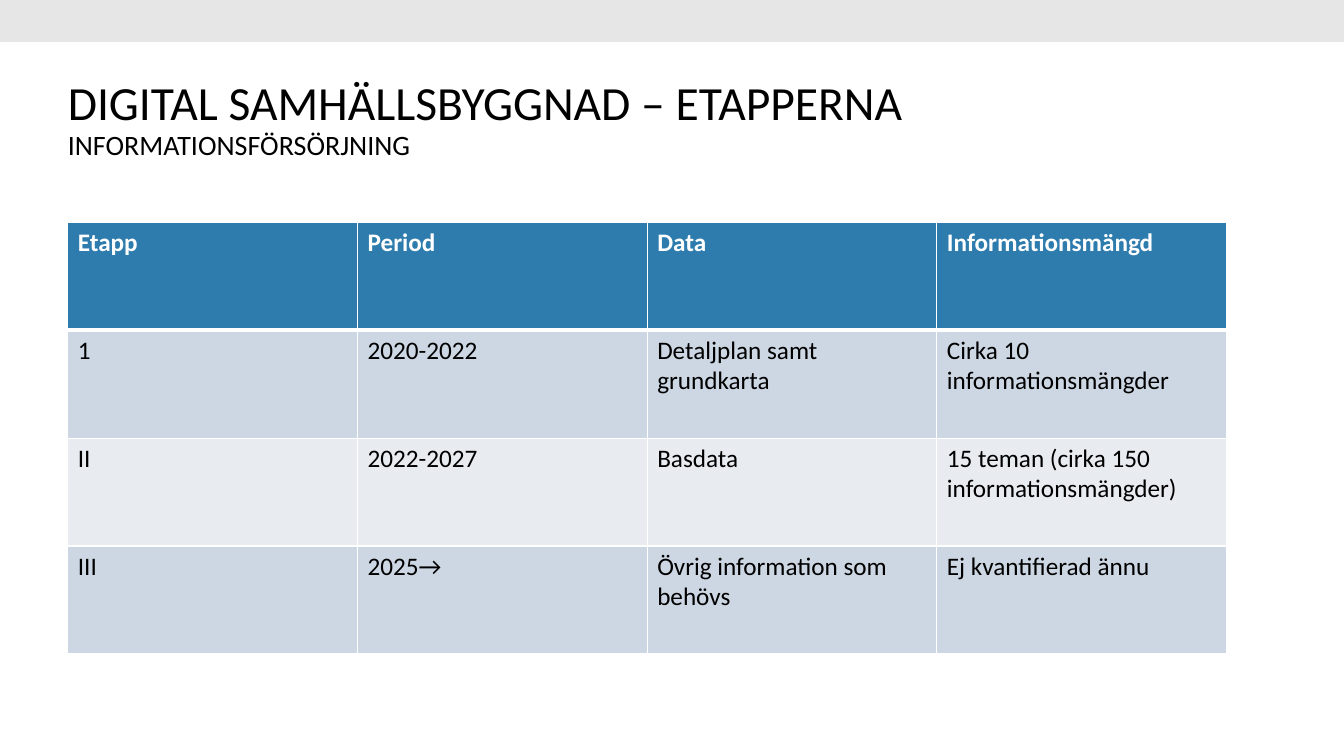
"""Build the slide on the stages of digital community planning."""
from dataclasses import dataclass

from lxml import etree
from pptx import Presentation
from pptx.dml.color import RGBColor
from pptx.enum.shapes import MSO_SHAPE
from pptx.enum.text import MSO_ANCHOR
from pptx.oxml.ns import qn
from pptx.util import Cm, Pt

RECTANGLE = MSO_SHAPE.RECTANGLE
TOP = MSO_ANCHOR.TOP

BLACK = RGBColor(0x00, 0x00, 0x00)
WHITE = RGBColor(0xFF, 0xFF, 0xFF)
BAND_GREY = RGBColor(0xE7, 0xE6, 0xE6)
HEADER_BLUE = RGBColor(0x2D, 0x7C, 0xAD)
ROW_DARK = RGBColor(0xCD, 0xD7, 0xE3)
ROW_LIGHT = RGBColor(0xE8, 0xEC, 0xF1)

FONT = "Calibri"
PAGE_WIDTH, PAGE_HEIGHT = Cm(33.87), Cm(19.05)
LEFT, CONTENT_WIDTH = Cm(1.71), Cm(29.2)
COLUMN_WIDTH, ROW_HEIGHT = Cm(7.3), Cm(2.72)


@dataclass(frozen=True)
class StageRow:
    texts: tuple[str, ...]
    fill: RGBColor
    color: RGBColor = BLACK
    bold: bool = False
    bottom_line: float = 1


ROWS = (
    StageRow(("Etapp", "Period", "Data", "Informationsmängd"), HEADER_BLUE, WHITE, True, 3),
    StageRow(("1", "2020-2022", "Detaljplan samt grundkarta", "Cirka 10 informationsmängder"), ROW_DARK),
    StageRow(("II", "2022-2027", "Basdata", "15 teman (cirka 150 informationsmängder)"), ROW_LIGHT),
    StageRow(("III", "2025→", "Övrig information som behövs", "Ej kvantifierad ännu"), ROW_DARK),
)


def add_span(para, text: str, size: float, color: RGBColor, bold: bool = False) -> None:
    span = para.add_run()
    span.text = text
    for name, value in {"name": FONT, "size": Pt(size), "bold": bold}.items():
        setattr(span.font, name, value)
    span.font.color.rgb = color


def add_band(page) -> None:
    band = page.shapes.add_shape(RECTANGLE, 0, 0, PAGE_WIDTH, Cm(1.06))
    band.shadow.inherit = False
    band.fill.solid()
    band.fill.fore_color.rgb = BAND_GREY
    band.line.fill.background()


def add_heading(page) -> None:
    frame = page.shapes.add_textbox(LEFT, Cm(2.01), CONTENT_WIDTH, Cm(2.1)).text_frame
    frame_format = {
        "word_wrap": True, "vertical_anchor": TOP,
        "margin_left": 0, "margin_right": 0, "margin_top": 0, "margin_bottom": 0,
    }
    for name, value in frame_format.items():
        setattr(frame, name, value)
    para = frame.paragraphs[0]
    para.line_spacing = 0.9
    add_span(para, "DIGITAL SAMHÄLLSBYGGNAD – ETAPPERNA", 34, BLACK)
    para.add_line_break()
    add_span(para, "INFORMATIONSFÖRSÖRJNING", 20, BLACK)


def add_borders(cell, bottom_line: float) -> None:
    properties = cell._tc.get_or_add_tcPr()
    for side, width in {"lnL": 1, "lnR": 1, "lnT": 1, "lnB": bottom_line}.items():
        line = etree.SubElement(properties, qn(f"a:{side}"), w=str(Pt(width)))
        fill = etree.SubElement(line, qn("a:solidFill"))
        etree.SubElement(fill, qn("a:srgbClr"), val=str(WHITE))


def add_stage_table(page, rows: tuple[StageRow, ...]) -> None:
    column_count = len(rows[0].texts)
    table = page.shapes.add_table(
        len(rows), column_count, LEFT, Cm(5.6), CONTENT_WIDTH, ROW_HEIGHT * len(rows)
    ).table
    for column in table.columns:
        column.width = COLUMN_WIDTH
    for table_row, stage in zip(table.rows, rows):
        table_row.height = ROW_HEIGHT
        for cell, text in zip(table_row.cells, stage.texts):
            add_borders(cell, stage.bottom_line)
            cell.fill.solid()
            cell.fill.fore_color.rgb = stage.fill
            add_span(cell.text_frame.paragraphs[0], text, 18, stage.color, stage.bold)


def main() -> None:
    deck = Presentation()
    deck.slide_width, deck.slide_height = PAGE_WIDTH, PAGE_HEIGHT
    page = deck.slides.add_slide(deck.slide_layouts[6])
    add_band(page)
    add_heading(page)
    add_stage_table(page, ROWS)
    deck.save("out.pptx")


if __name__ == "__main__":
    main()
